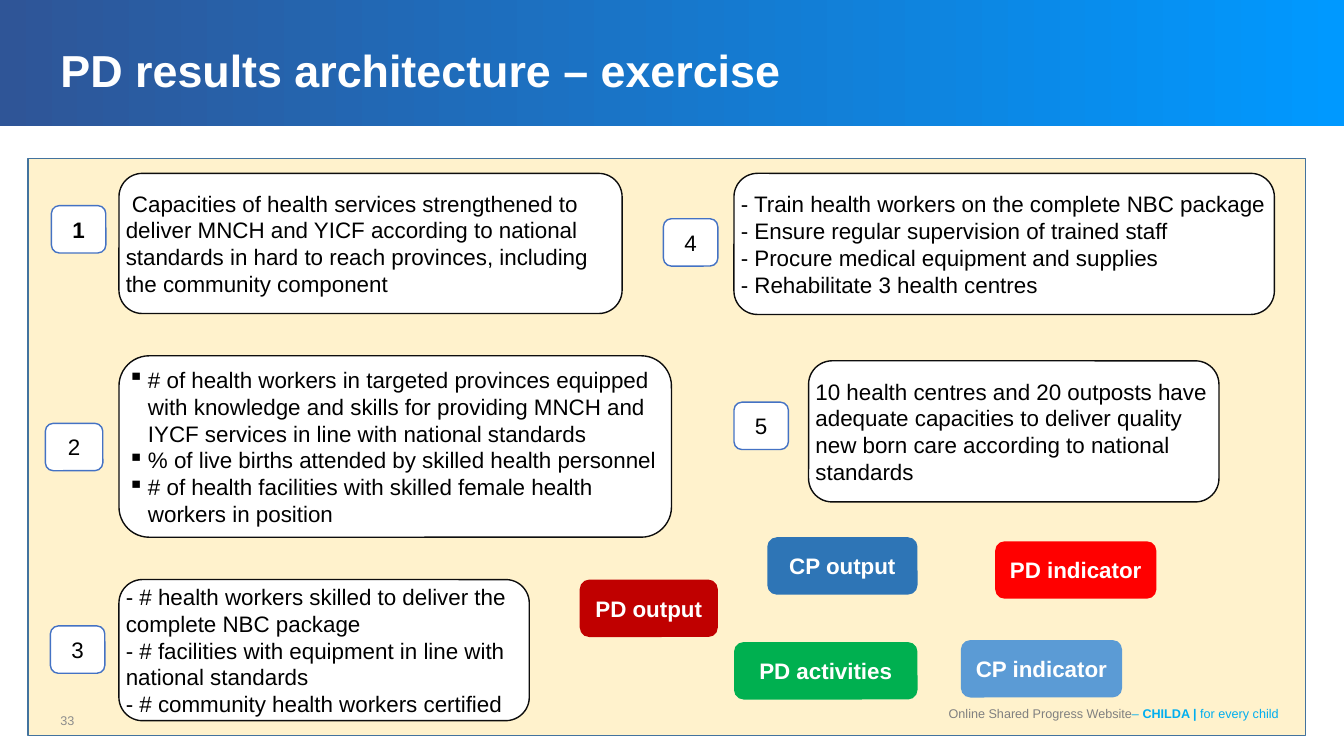
from lxml.etree import SubElement
from pptx import Presentation
from pptx.dml.color import RGBColor
from pptx.enum.shapes import MSO_SHAPE
from pptx.enum.text import MSO_ANCHOR, MSO_AUTO_SIZE, PP_ALIGN
from pptx.oxml.ns import qn
from pptx.util import Pt

PX = 9144  # EMU per px, 100 px to the inch
BULLET_INDENT = 20


def rgb(value):
    return RGBColor.from_string(value)


def add_box(preset, at, fill, line=None, lines=(), color="000000",
            bold=False, align=PP_ALIGN.CENTER):
    box = slide.shapes.add_shape(preset, *(n * PX for n in at))
    box.shadow.inherit = False
    box.fill.solid()
    box.fill.fore_color.rgb = rgb(fill)
    if line:
        box.line.color.rgb = rgb(line)
        box.line.width = Pt(1)
    else:
        box.line.fill.background()
    frame = box.text_frame
    frame.word_wrap = True
    frame.vertical_anchor = MSO_ANCHOR.MIDDLE
    frame.margin_left = frame.margin_right = 0
    frame.margin_top = frame.margin_bottom = 0
    for index, text in enumerate(lines):
        paragraph = frame.add_paragraph() if index else frame.paragraphs[0]
        paragraph.text = text
        paragraph.alignment = align
        paragraph.font.name = "Arial"
        paragraph.font.size = Pt(16)
        paragraph.font.bold = bold
        paragraph.font.color.rgb = rgb(color)
    return box


prs = Presentation()
prs.slide_width, prs.slide_height = 1333 * PX, 750 * PX
slide = prs.slides.add_slide(prs.slide_layouts[5])

# Header band and panel
header = add_box(MSO_SHAPE.RECTANGLE, (0, 0, 1333, 125), "2F5597")
header.fill.gradient()
header.fill.gradient_angle = 0
for stop, color in zip(header.fill.gradient_stops, ("2F5597", "0099FF")):
    stop.color.rgb = rgb(color)
add_box(MSO_SHAPE.RECTANGLE, (28, 157, 1267, 573), "FFF2CC", "43739E")

# Title, raised above the header band
title = slide.shapes.title
title.left, title.top = 50 * PX, 0
title.width, title.height = 1150 * PX, 145 * PX
slide.shapes.element.append(title.element)
title.text_frame.text = "PD results architecture – exercise"
title.text_frame.auto_size = MSO_AUTO_SIZE.NONE
title.text_frame.vertical_anchor = MSO_ANCHOR.MIDDLE
heading = title.text_frame.paragraphs[0]
heading.alignment = PP_ALIGN.LEFT
heading.line_spacing = 0.9
heading.font.name = "Arial"
heading.font.size = Pt(32)
heading.font.bold = True
heading.font.color.rgb = rgb("FFFFFF")

# Numbered statements: number position, statement position, lines
statements = [
    ((51, 204, 54, 47), (118, 172, 499, 139), [
        " Capacities of health services strengthened to deliver MNCH and YICF "
        "according to national standards in hard to reach provinces, "
        "including the community component"]),
    ((45, 420, 57, 47), (118, 353, 548, 180), [
        "# of health workers in targeted provinces equipped with knowledge and "
        "skills for providing MNCH and IYCF services in line with national standards",
        "% of live births attended by skilled health personnel",
        "# of health facilities with skilled female health workers in position"]),
    ((50, 621, 54, 47), (118, 575, 407, 140), [
        "- # health workers skilled to deliver the complete NBC package",
        "- # facilities with equipment in line with national standards",
        "- # community health workers certified"]),
    ((658, 217, 54, 47), (728, 172, 536, 140), [
        "- Train health workers on the complete NBC package",
        "- Ensure regular supervision of trained staff",
        "- Procure medical equipment and supplies",
        "- Rehabilitate 3 health centres"]),
    ((728, 399, 54, 47), (802, 358, 407, 140), [
        "10 health centres and 20 outposts have adequate capacities to deliver "
        "quality new born care according to national standards"]),
]
for number, (number_at, statement_at, lines) in enumerate(statements, 1):
    statement = add_box(MSO_SHAPE.ROUNDED_RECTANGLE, statement_at, "FFFFFF",
                        "0D0D0D", lines, align=PP_ALIGN.LEFT)
    add_box(MSO_SHAPE.ROUNDED_RECTANGLE, number_at, "FFFFFF", "4472C4",
            [str(number)], bold=number == 1)
    if number == 2:  # the indicator list has square bullets
        for paragraph in statement.text_frame.paragraphs:
            properties = paragraph._p.get_or_add_pPr()
            properties.set("marL", str(BULLET_INDENT * PX))
            properties.set("indent", str(-BULLET_INDENT * PX))
            bullet = SubElement(properties, qn("a:buChar"), char="▪")
            # bullets come before the default run properties
            properties.find(qn("a:defRPr")).addprevious(bullet)

# Answer labels
answers = [
    ("PD output", (575, 575, 137, 57), "C00000"),
    ("PD indicator", (987, 537, 160, 57), "FF0000"),
    ("CP output", (761, 533, 149, 57), "2E75B6"),
    ("PD activities", (728, 637, 182, 57), "00B050"),
    ("CP indicator", (953, 635, 160, 57), "5B9BD5"),
]
for answer, at, fill in answers:
    add_box(MSO_SHAPE.ROUNDED_RECTANGLE, at, fill, lines=[answer],
            color="FFFFFF", bold=True)

# Slide number and footer: position, alignment, runs of text, colour, bold
footers = [
    ((50, 695, 300, 40), PP_ALIGN.LEFT, [("33", "8C8C8C", False)]),
    ((930, 686, 348, 44), PP_ALIGN.RIGHT, [
        ("Online Shared Progress Website", "808080", False),
        ("– ", "00AEEF", False),
        ("CHILDA |", "00AEEF", True),
        (" for every child", "00AEEF", False)]),
]
for at, align, parts in footers:
    footer = slide.shapes.add_textbox(*(n * PX for n in at)).text_frame
    footer.word_wrap = True
    footer.vertical_anchor = MSO_ANCHOR.MIDDLE
    paragraph = footer.paragraphs[0]
    paragraph.alignment = align
    paragraph.font.name = "Arial"
    paragraph.font.size = Pt(9)
    for text, color, bold in parts:
        run = paragraph.add_run()
        run.text = text
        run.font.color.rgb = rgb(color)
        run.font.bold = bold

prs.save("out.pptx")
